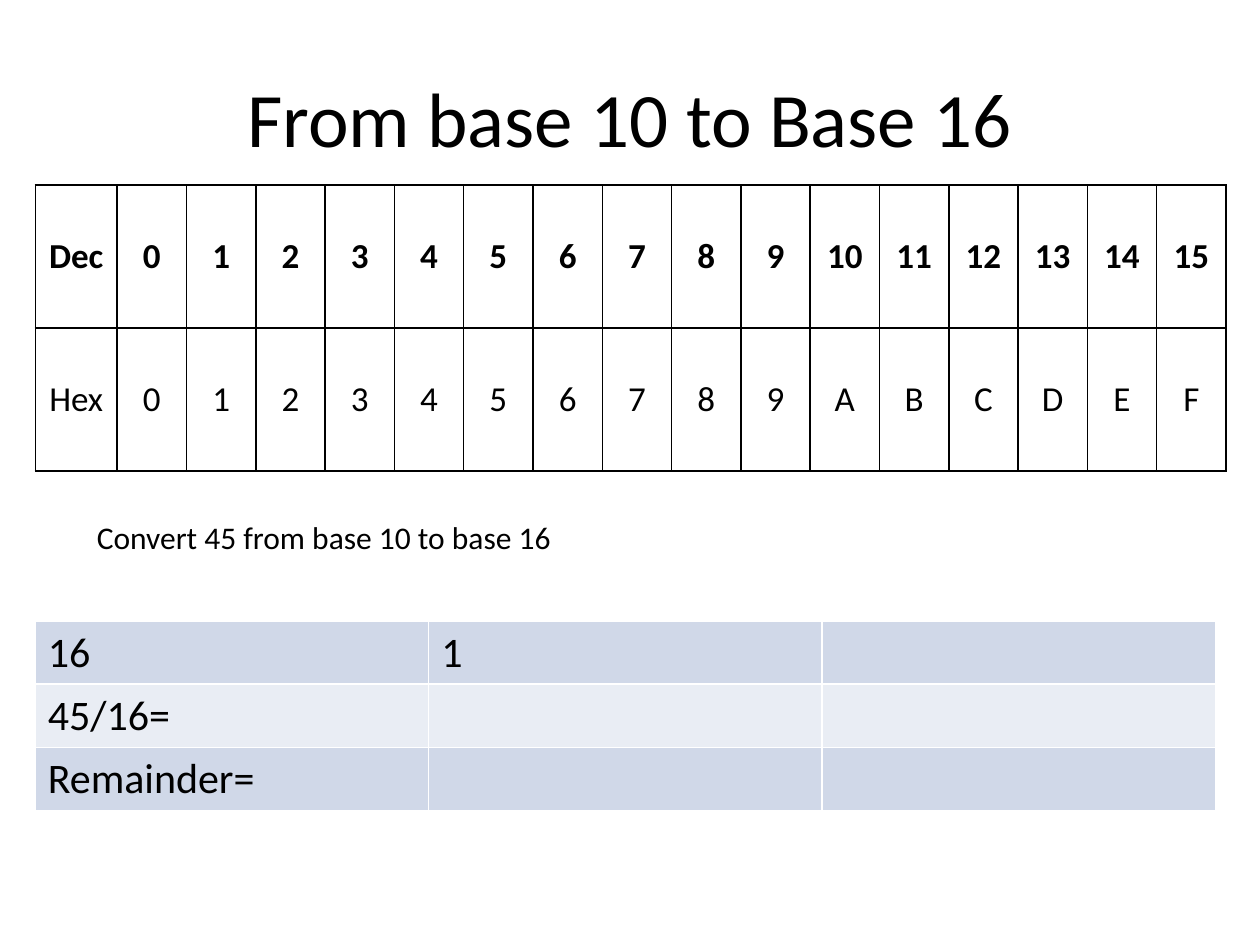
"""Build a slide on converting base 10 numbers to base 16."""
from lxml.etree import SubElement
from pptx import Presentation
from pptx.dml.color import RGBColor
from pptx.enum.text import MSO_ANCHOR as Anchor, PP_ALIGN as Align
from pptx.oxml.ns import qn
from pptx.util import Inches, Pt

presentation = Presentation()
presentation.slide_width, presentation.slide_height = Inches(10), Inches(7.5)
column = presentation.slide_width / 100
row = presentation.slide_height / 100
slide = presentation.slides.add_slide(presentation.slide_layouts[6])


def write(frame, text, size, align=Align.LEFT, bold=False):
    paragraph = frame.paragraphs[0]
    paragraph.text = text
    paragraph.alignment = align
    paragraph.font.name = "Calibri"
    paragraph.font.size = Pt(size)
    paragraph.font.bold = bold
    paragraph.font.color.rgb = RGBColor.from_string("000000")


def add_grid(top, widths, height, lines, fills, border, size, align, anchor, bold_header):
    shape = slide.shapes.add_table(
        len(lines), len(widths), int(2.8 * column), int(top * row),
        int(sum(widths) * column), int(height * len(lines) * row))
    table = shape.table
    table.first_row = bold_header
    table.horz_banding = False
    for table_column, width in zip(table.columns, widths):
        table_column.width = int(width * column)
    for index, (line, fill) in enumerate(zip(lines, fills)):
        table.rows[index].height = int(height * row)
        for cell, text in zip(table.rows[index].cells, line):
            write(cell.text_frame, text, size, align, bold_header and index == 0)
            cell.vertical_anchor = anchor
            properties = cell._tc.get_or_add_tcPr()
            for side in ("a:lnL", "a:lnR", "a:lnT", "a:lnB"):
                edge = SubElement(properties, qn(side), w=str(Pt(1)))
                SubElement(SubElement(edge, qn("a:solidFill")), qn("a:srgbClr"), val=border)
            cell.fill.solid()
            cell.fill.fore_color.rgb = RGBColor.from_string(fill)


for text, left, top, width, height, size, align, anchor in (
    ("From base 10 to Base 16", 5, 4, 90, 16.67, 44, Align.CENTER, Anchor.MIDDLE),
    ("Convert 45 from base 10 to base 16", 6.7, 54.13, 84.3, 5.33, 18, Align.LEFT, Anchor.TOP),
):
    box = slide.shapes.add_textbox(
        int(left * column), int(top * row), int(width * column), int(height * row))
    box.text_frame.word_wrap = True
    box.text_frame.vertical_anchor = anchor
    write(box.text_frame, text, size, align)

digits = [["Dec", *(str(value) for value in range(16))], ["Hex", *"0123456789ABCDEF"]]
add_grid(19.6, [6.5] + [5.5] * 16, 15.13, digits, ["FFFFFF"] * 2, "000000", 20,
         Align.CENTER, Anchor.MIDDLE, True)

division = [["16", "1", ""], ["45/16=", "", ""], ["Remainder=", "", ""]]
add_grid(65.73, [31.23] * 3, 6.67, division, ["D0D8E8", "E9EDF4", "D0D8E8"], "FFFFFF", 24,
         Align.LEFT, Anchor.TOP, False)

presentation.save("out.pptx")
